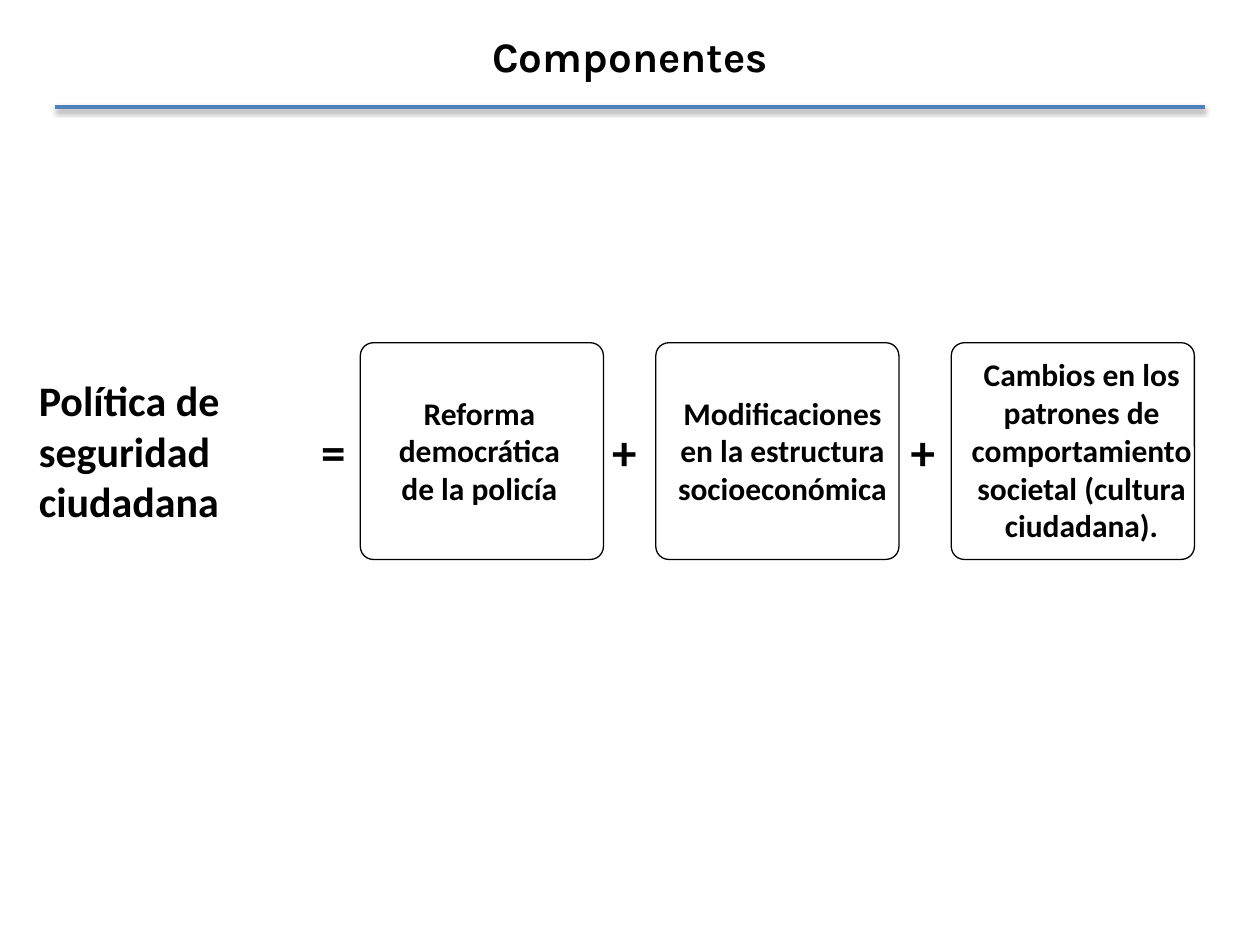
from lxml.etree import SubElement
from pptx import Presentation
from pptx.dml.color import RGBColor
from pptx.enum.shapes import MSO_CONNECTOR, MSO_SHAPE
from pptx.enum.text import MSO_ANCHOR, MSO_AUTO_SIZE, PP_ALIGN
from pptx.oxml.ns import qn
from pptx.util import Inches, Pt

BLACK = RGBColor(0, 0, 0)
WHITE = RGBColor(255, 255, 255)
BLUE = RGBColor(0x4F, 0x81, 0xBD)

TITLE = "Componentes"
RESULT = "Política de seguridad ciudadana"
COMPONENTS = [
    ("Reforma democrática de la policía", 2.91, 1.79, 1.01),
    ("Modificaciones en la estructura socioeconómica", 5.2, 2.02, 1.01),
    ("Cambios en los patrones de comportamiento societal (cultura ciudadana).", 7.3, 2.57, 1.62),
]
OPERATORS = [("=", 2.45), ("+", 4.76), ("+", 7.13)]

PAGE_WIDTH, PAGE_HEIGHT = 10, 7.5
MARGIN, RULE_TOP = 0.44, 0.85
ROW_CENTER = 3.58
CARD_LEFT, CARD_STEP, CARD_WIDTH, CARD_HEIGHT = 2.86, 2.345, 1.93, 1.72


def write(frame, text, size, font="Calibri", align=PP_ALIGN.LEFT):
    """Write one bold run into a text frame."""
    para = frame.paragraphs[0]
    para.alignment = align
    span = para.add_run()
    span.text = text
    span.font.name = font
    span.font.size = Pt(size)
    span.font.bold = True
    span.font.color.rgb = BLACK


def add_label(page, text, left, width, height, size, align=PP_ALIGN.LEFT, wrap=True):
    """Add a text box centred on the row of the equation."""
    box = page.shapes.add_textbox(
        Inches(left), Inches(ROW_CENTER - height / 2), Inches(width), Inches(height))
    box.text_frame.word_wrap = wrap
    box.text_frame.auto_size = MSO_AUTO_SIZE.SHAPE_TO_FIT_TEXT
    write(box.text_frame, text, size, align=align)


def add_card(page, column):
    """Add the rounded outline of one component."""
    card = page.shapes.add_shape(
        MSO_SHAPE.ROUNDED_RECTANGLE,
        Inches(CARD_LEFT + column * CARD_STEP), Inches(ROW_CENTER - CARD_HEIGHT / 2),
        Inches(CARD_WIDTH), Inches(CARD_HEIGHT))
    card.adjustments[0] = 0.06
    card.shadow.inherit = False
    card.fill.solid()
    card.fill.fore_color.rgb = WHITE
    card.line.color.rgb = BLACK
    card.line.width = Pt(0.75)


def add_rule(page):
    """Add the blue rule with its soft shadow under the title."""
    rule = page.shapes.add_connector(
        MSO_CONNECTOR.STRAIGHT, Inches(MARGIN), Inches(RULE_TOP),
        Inches(PAGE_WIDTH - MARGIN), Inches(RULE_TOP))
    rule.line.color.rgb = BLUE
    rule.line.width = Pt(2)
    effects = SubElement(rule._element.spPr, qn("a:effectLst"))
    shadow = SubElement(effects, qn("a:outerShdw"), blurRad=str(Pt(3.1)),
                        dist=str(Pt(1.6)), dir="5400000", rotWithShape="0")
    color = SubElement(shadow, qn("a:srgbClr"), val=str(BLACK))
    SubElement(color, qn("a:alpha"), val="38000")


def set_title(page):
    """Place and format the title placeholder."""
    title = page.shapes.title
    width = 2.65
    title.left, title.top = Inches((PAGE_WIDTH - width) / 2), Inches(0.19)
    title.width, title.height = Inches(width), Inches(0.5)
    title.text_frame.word_wrap = True
    title.text_frame.vertical_anchor = MSO_ANCHOR.MIDDLE
    title.text_frame.auto_size = MSO_AUTO_SIZE.SHAPE_TO_FIT_TEXT
    write(title.text_frame, TITLE, 24, "Karla", PP_ALIGN.CENTER)


def main():
    """Build the slide and save it."""
    deck = Presentation()
    deck.slide_width, deck.slide_height = Inches(PAGE_WIDTH), Inches(PAGE_HEIGHT)
    page = deck.slides.add_slide(deck.slide_layouts[5])
    add_rule(page)
    set_title(page)
    for column in range(len(COMPONENTS)):
        add_card(page, column)
    for sign, left in OPERATORS:
        add_label(page, sign, left, 0.4, 0.57, 28, wrap=False)
    add_label(page, RESULT, 0.21, 2.24, 1.31, 24)
    for text, left, width, height in COMPONENTS:
        add_label(page, text, left, width, height, 18, PP_ALIGN.CENTER)
    deck.save("out.pptx")


if __name__ == "__main__":
    main()
